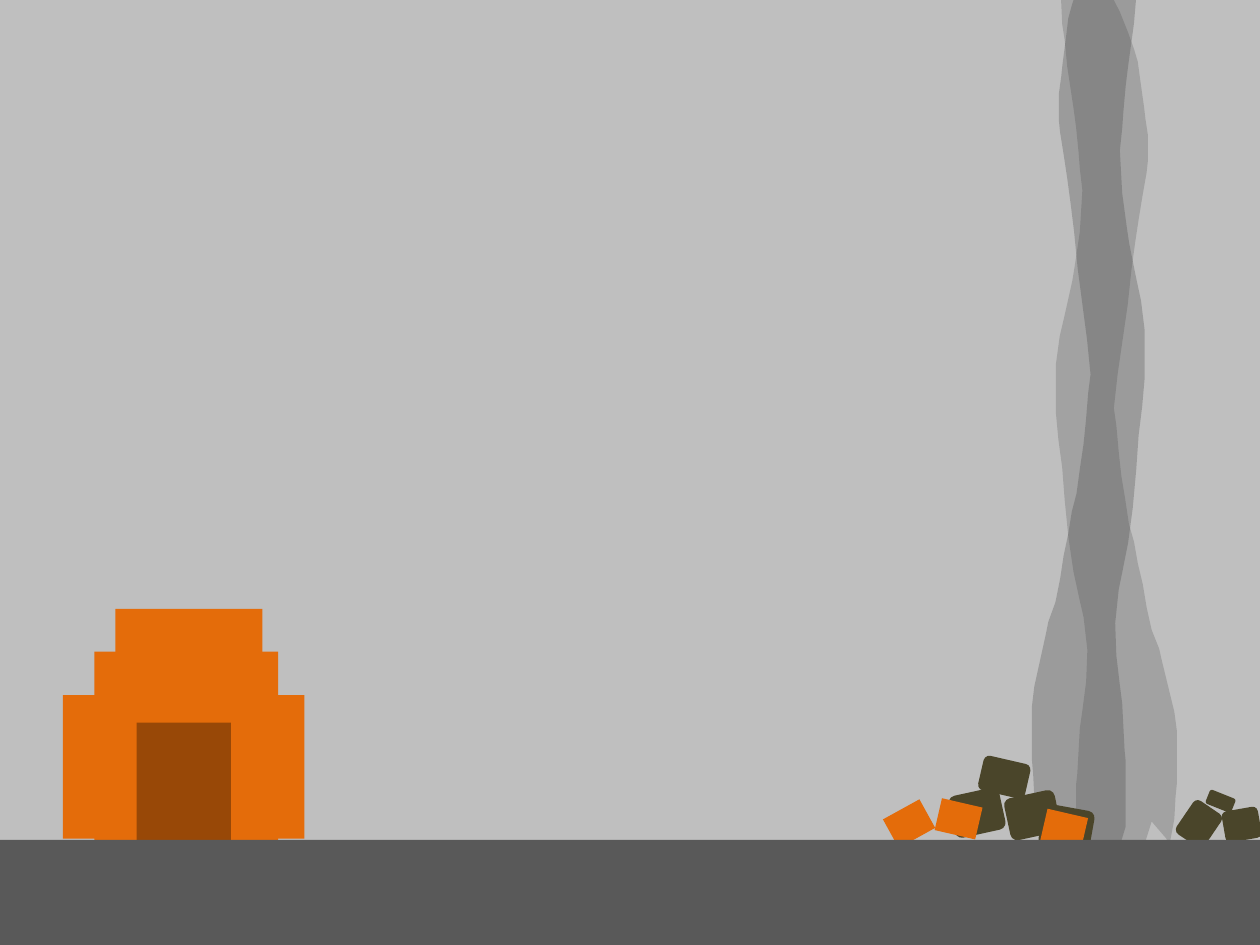
from pptx import Presentation
from pptx.dml.color import RGBColor
from pptx.enum.shapes import MSO_SHAPE as Form
from pptx.oxml.ns import qn
from pptx.util import Pt
from lxml.etree import SubElement as Sub

SKY = RGBColor(0xBF, 0xBF, 0xBF)
GROUND = RGBColor(0x59, 0x59, 0x59)
DARK = RGBColor(0x40, 0x40, 0x40)
ORANGE = RGBColor(0xE4, 0x6C, 0x0A)
BROWN = RGBColor(0x98, 0x48, 0x07)
ROCK = RGBColor(0x4A, 0x45, 0x2A)

# Smoke outline in its own units, clockwise from the lower right
SMOKE = [
    (84, 731), (89, 719), (91, 712), (94, 696), (95, 678), (96, 668),
    (96, 626), (94, 611), (84, 570), (82, 561), (76, 546), (72, 528),
    (69, 510), (65, 493), (62, 476), (58, 462), (55, 442), (52, 424),
    (50, 406), (48, 384), (46, 370), (49, 343), (57, 288), (60, 260),
    (63, 238), (66, 218), (69, 200), (72, 183), (73, 174), (73, 153),
    (71, 140), (70, 131), (67, 110), (65, 95), (62, 85), (57, 71),
    (51, 56), (45, 44), (42, 34), (36, 16), (32, 3), (28, 0),
    (19, 6), (8, 13), (5, 21), (4, 43), (5, 65), (7, 78),
    (9, 99), (14, 132), (16, 147), (18, 167), (19, 180), (21, 197),
    (19, 230), (15, 257), (13, 269), (7, 296), (3, 313), (0, 335),
    (0, 374), (2, 395), (5, 417), (7, 443), (10, 473), (14, 500),
    (19, 523), (22, 536), (25, 562), (24, 587), (21, 610), (19, 624),
    (17, 660), (16, 669), (16, 719), (19, 728), (25, 744), (38, 750),
    (45, 753), (55, 752), (63, 749), (67, 743), (71, 724), (71, 714),
    (76, 698), (88, 712),
]
WIDE = max(x for x, _ in SMOKE)


class Scene:
    """Holds the slide and the shared flat style."""

    def __init__(self, slide):
        self.slide = slide
        self.layer = slide.shapes

    def group(self):
        self.layer = self.slide.shapes.add_group_shape().shapes

    def ungroup(self):
        self.layer = self.slide.shapes

    def paint(self, shape, color, **style):
        shape.shadow.inherit = False
        shape.fill.solid()
        shape.fill.fore_color.rgb = color
        shape.line.fill.background()
        for key, val in style.items():
            setattr(shape, key, val)
        return shape

    def block(self, box, color, form=Form.RECTANGLE, turn=0):
        shape = self.layer.add_shape(form, *map(Pt, box))
        return self.paint(shape, color, rotation=turn)

    def plume(self, left, top, scale, color, flip=False):
        dots = [(WIDE - x if flip else x, y) for x, y in SMOKE]
        size = tuple(Pt(1) * part for part in scale)
        pen = self.layer.build_freeform(*dots[0], scale=size)
        pen.add_line_segments(dots[1:], close=True)
        shape = self.paint(pen.convert_to_shape(Pt(left), Pt(top)), color)
        tint = shape.fill._xPr.find(qn("a:solidFill"))[0]
        Sub(tint, qn("a:alpha"), val="28000")


def main():
    deck = Presentation()
    deck.slide_width, deck.slide_height = Pt(720), Pt(540)
    scene = Scene(deck.slides.add_slide(deck.slide_layouts[6]))

    # Sky
    scene.block((-73.5, -82, 861, 631.5), SKY)

    # Hut with its door
    scene.group()
    for box in [(54, 372.4, 105, 110), (66, 348, 84, 61),
                (132, 397.2, 42, 82), (36, 397.2, 42, 82)]:
        scene.block(box, ORANGE)
    scene.block((78, 413, 54, 67), BROWN)

    # Two plumes, the second one mirrored
    scene.group()
    scene.plume(603.4, -33.1, (0.72, 0.72), GROUND)
    scene.plume(589.7, -59.8, (0.67, 0.74), DARK, flip=True)

    # Rocks
    for *box, turn in [
        (594.7, 461.3, 29.5, 24.5, 10.3), (575.3, 453.6, 29.5, 24.5, 347.7),
        (675.4, 459.4, 19.4, 23, 34.2), (693.2, 449.9, 8.6, 15.8, 291.8),
        (699.1, 462.2, 20.9, 18, 350), (543.6, 452.2, 29.5, 24.5, 347.7),
        (560.2, 434, 27.4, 20.2, 12.9),
    ]:
        scene.block(box, ROCK, Form.ROUNDED_RECTANGLE, turn)

    # Orange rubble, all pieces of one size
    for left, top, turn in [(507.6, 461.3, 331.1), (535.9, 458.6, 13),
                            (596.2, 464.6, 13)]:
        scene.block((left, top, 23.8, 18.7), ORANGE, turn=turn)

    # Ground
    scene.ungroup()
    scene.block((-52.5, 480, 844.5, 80.5), GROUND)
    deck.save("out.pptx")


if __name__ == "__main__":
    main()
